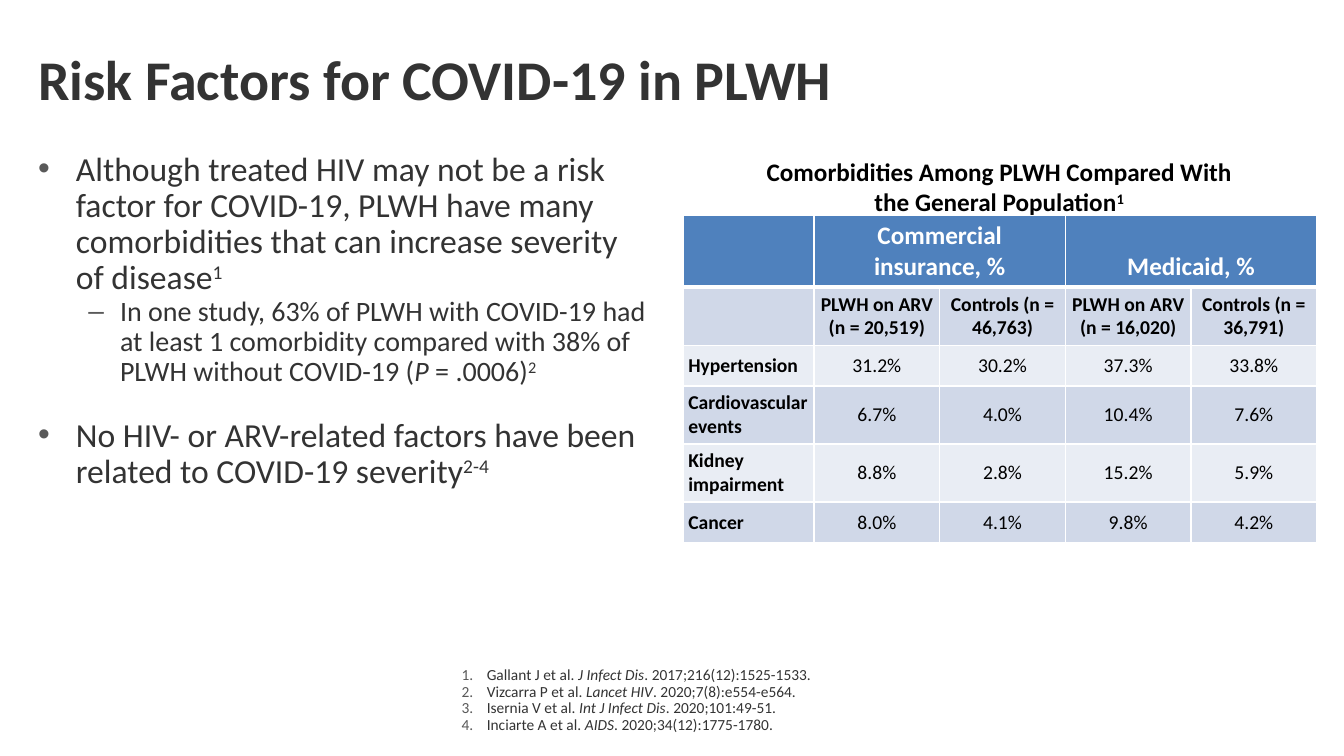
from lxml import etree
from pptx import Presentation
from pptx.dml.color import RGBColor
from pptx.enum.text import MSO_ANCHOR, MSO_AUTO_SIZE, PP_ALIGN
from pptx.oxml.ns import qn
from pptx.util import Pt

LEFT, CENTER = PP_ALIGN.LEFT, PP_ALIGN.CENTER
TOP, MIDDLE, BOTTOM = MSO_ANCHOR.TOP, MSO_ANCHOR.MIDDLE, MSO_ANCHOR.BOTTOM
NO_FIT = MSO_AUTO_SIZE.NONE

FONT = "Calibri"
COLORS = {
    "text": "333333",
    "bullet": "595959",
    "black": "000000",
    "white": "FFFFFF",
    "header": "4F81BD",
    "dark band": "D0D8E8",
    "light band": "E9EDF4",
}

TITLE = "Risk Factors for COVID-19 in PLWH"

# Each point: level, space before, spans of (text, style)
POINTS = [
    (0, 0, [("Although treated HIV may not be a risk factor for COVID-19, PLWH have "
             "many comorbidities that can increase severity of disease", ""),
            ("1", "super")]),
    (1, 0, [("In one study, 63% of PLWH with COVID-19 had at least 1 comorbidity "
             "compared with 38% of PLWH without COVID-19 (", ""),
            ("P", "italic"), (" = .0006)", ""), ("2", "super")]),
    (0, 21.6, [("No HIV- or ARV-related factors have been related to COVID-19 severity", ""),
               ("2-4", "super")]),
]
# Per level: text size, left margin, hanging indent, bullet
LEVELS = [(24, 27, 27, "•"), (20, 58.5, 22.5, "–")]

REFERENCES = [
    ("Gallant J et al. ", "J Infect Dis", ". 2017;216(12):1525-1533."),
    ("Vizcarra P et al. ", "Lancet HIV", ". 2020;7(8):e554-e564."),
    ("Isernia V et al. ", "Int J Infect Dis", ". 2020;101:49-51."),
    ("Inciarte A et al. ", "AIDS", ". 2020;34(12):1775-1780."),
]

CAPTION = [("Comorbidities Among PLWH Compared With the General Population", ""),
           ("1", "super")]
TABLE = [
    ["", "Commercial insurance, %", "", "Medicaid, %", ""],
    ["", "PLWH on ARV (n = 20,519)", "Controls (n = 46,763)",
     "PLWH on ARV (n = 16,020)", "Controls (n = 36,791)"],
    ["Hypertension", "31.2%", "30.2%", "37.3%", "33.8%"],
    ["Cardiovascular events", "6.7%", "4.0%", "10.4%", "7.6%"],
    ["Kidney impairment", "8.8%", "2.8%", "15.2%", "5.9%"],
    ["Cancer", "8.0%", "4.1%", "9.8%", "4.2%"],
]
COLUMN_WIDTHS = [93.5, 89.75, 89.75, 89.75, 89.75]
ROW_HEIGHTS = [51, 41.4, 29.2, 41.4, 41.4, 29.2]

# Left, top, width, height
TITLE_AREA = (20, 14, 920, 90)
BODY_AREA = (20, 105, 452, 340)
REFERENCE_AREA = (322.5, 473, 618, 57.5)
CAPTION_AREA = (537, 108, 353.5, 51)
TABLE_AREA = (488, 154, sum(COLUMN_WIDTHS), sum(ROW_HEIGHTS))


def rgb(name):
    return RGBColor.from_string(COLORS[name])


def place(box, area, anchor):
    box.left, box.top, box.width, box.height = map(Pt, area)
    frame = box.text_frame
    frame.word_wrap = True
    frame.auto_size = NO_FIT
    frame.vertical_anchor = anchor
    return frame


def write(para, spans, size, color, bold=False, align=LEFT):
    para.alignment = align
    font = para.font
    font.name, font.size, font.bold = FONT, Pt(size), bold
    font.color.rgb = rgb(color)
    for text, style in spans:
        span = para.add_run()
        span.text = text
        if style == "italic":
            span.font.italic = True
        elif style == "super":
            span._r.get_or_add_rPr().set("baseline", "30000")


def add_item(frame, index, margin, hang, tag, **mark):
    """Return paragraph number index with a hanging bullet or number."""
    para = frame.add_paragraph() if index else frame.paragraphs[0]
    props = para._p.get_or_add_pPr()
    props.set("marL", str(Pt(margin)))
    props.set("indent", str(-Pt(hang)))
    tint = etree.SubElement(props, qn("a:buClr"))
    etree.SubElement(tint, qn("a:srgbClr"), val=COLORS["bullet"])
    etree.SubElement(props, qn(tag), **mark)
    para.line_spacing = 0.9
    para.space_before = Pt(0)
    return para


def add_borders(cell, header):
    props = cell._tc.get_or_add_tcPr()
    for side in "LRTB":
        width = 3 if header and side == "B" else 1
        line = etree.SubElement(props, qn(f"a:ln{side}"), w=str(Pt(width)))
        fill = etree.SubElement(line, qn("a:solidFill"))
        etree.SubElement(fill, qn("a:srgbClr"), val=COLORS["white"])


def fill_cell(cell, text, row, column):
    header = row == 0
    add_borders(cell, header)
    band = "header" if header else "dark band" if row % 2 else "light band"
    cell.fill.solid()
    cell.fill.fore_color.rgb = rgb(band)
    cell.vertical_anchor = BOTTOM if row < 2 else MIDDLE
    if not header:
        cell.margin_left = cell.margin_right = Pt(3.6)
        cell.margin_top = cell.margin_bottom = Pt(3.6)
    if text:
        write(cell.text_frame.paragraphs[0], [(text, "")], 18 if header else 14,
              "white" if header else "black", bold=row < 2 or column == 0,
              align=CENTER if column else LEFT)


def add_comorbidity_table(slide):
    table = slide.shapes.add_table(len(TABLE), len(COLUMN_WIDTHS),
                                   *map(Pt, TABLE_AREA)).table
    table.horz_banding = False
    for column, width in zip(table.columns, COLUMN_WIDTHS):
        column.width = Pt(width)
    for row, height in zip(table.rows, ROW_HEIGHTS):
        row.height = Pt(height)
    for first in (1, 3):
        table.cell(0, first).merge(table.cell(0, first + 1))
    for r, texts in enumerate(TABLE):
        for c, text in enumerate(texts):
            fill_cell(table.cell(r, c), text, r, c)


def main():
    deck = Presentation()
    deck.slide_width, deck.slide_height = Pt(960), Pt(540)
    slide = deck.slides.add_slide(deck.slide_layouts[3])
    title, body, references = slide.placeholders

    frame = place(title, TITLE_AREA, MIDDLE)
    frame.paragraphs[0].line_spacing = 0.9
    write(frame.paragraphs[0], [(TITLE, "")], 40, "text", bold=True)

    frame = place(body, BODY_AREA, TOP)
    for index, (level, gap, spans) in enumerate(POINTS):
        size, margin, hang, bullet = LEVELS[level]
        para = add_item(frame, index, margin, hang, "a:buChar", char=bullet)
        para.level = level
        para.space_before = Pt(gap)
        write(para, spans, size, "text")

    frame = place(references, REFERENCE_AREA, TOP)
    for index, (authors, journal, issue) in enumerate(REFERENCES):
        para = add_item(frame, index, 18, 18, "a:buAutoNum", type="arabicPeriod")
        write(para, [(authors, ""), (journal, "italic"), (issue, "")], 11, "text")

    add_comorbidity_table(slide)
    caption = slide.shapes.add_textbox(*map(Pt, CAPTION_AREA))
    frame = place(caption, CAPTION_AREA, TOP)
    write(frame.paragraphs[0], CAPTION, 18, "black", bold=True, align=CENTER)

    deck.save("out.pptx")


if __name__ == "__main__":
    main()
